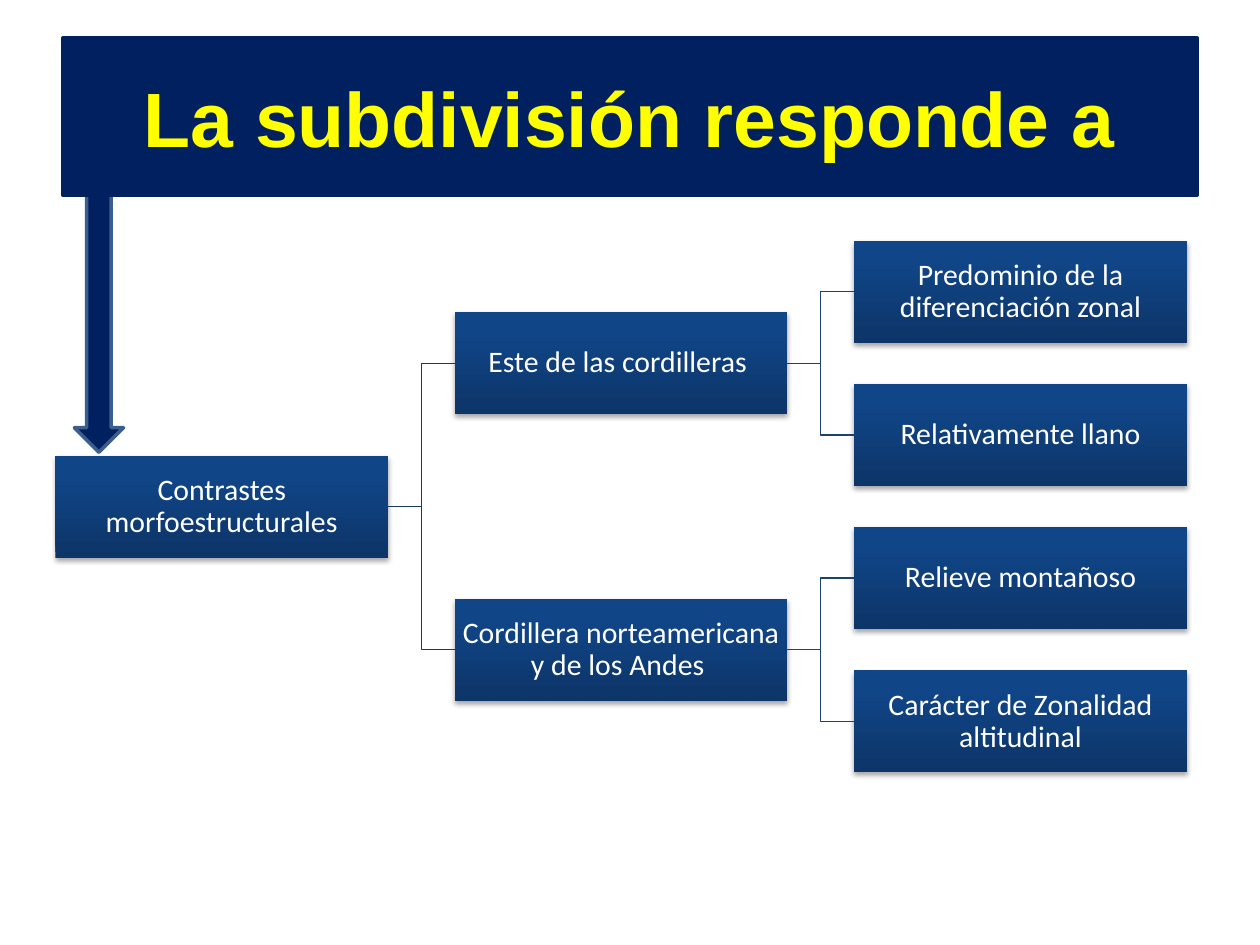
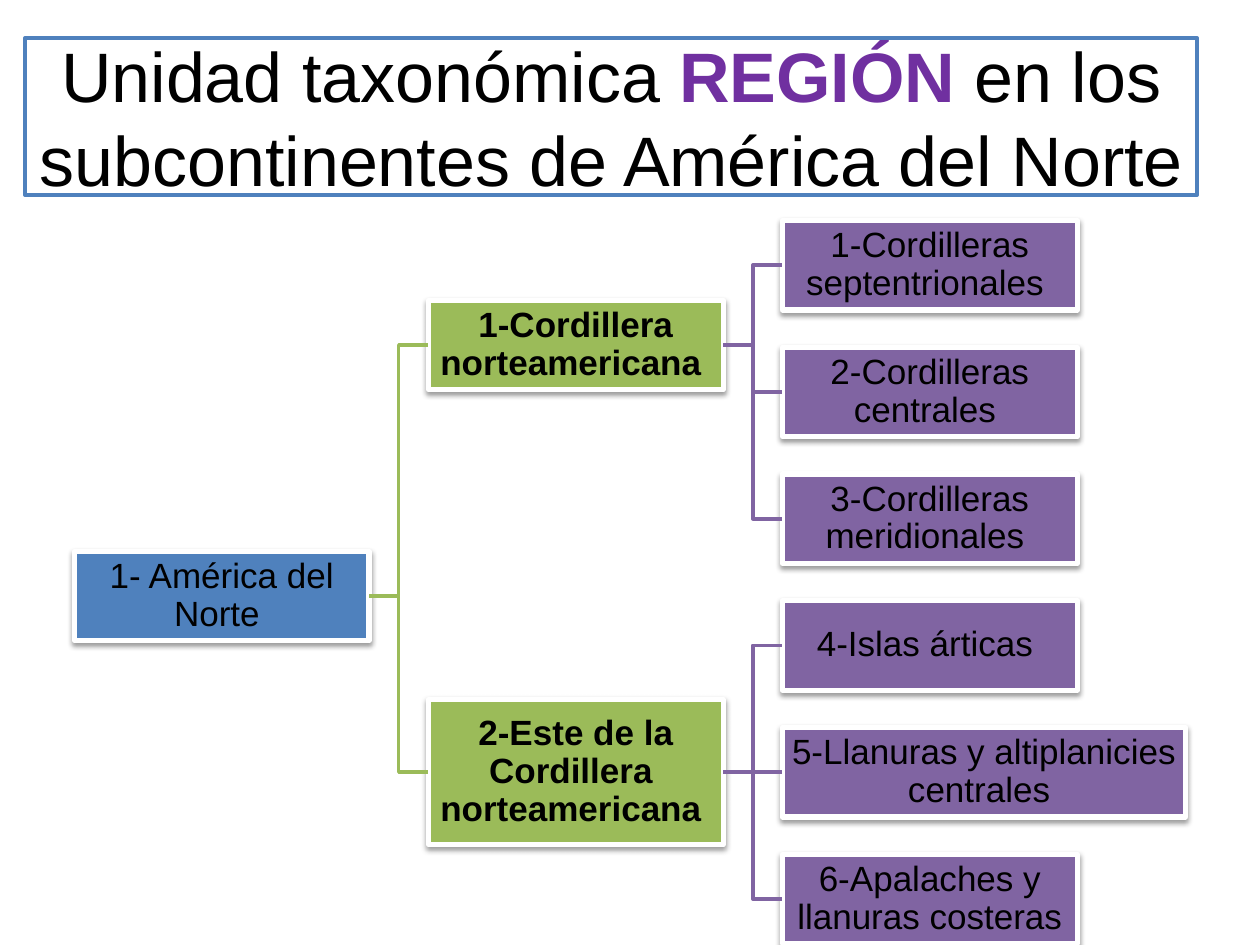
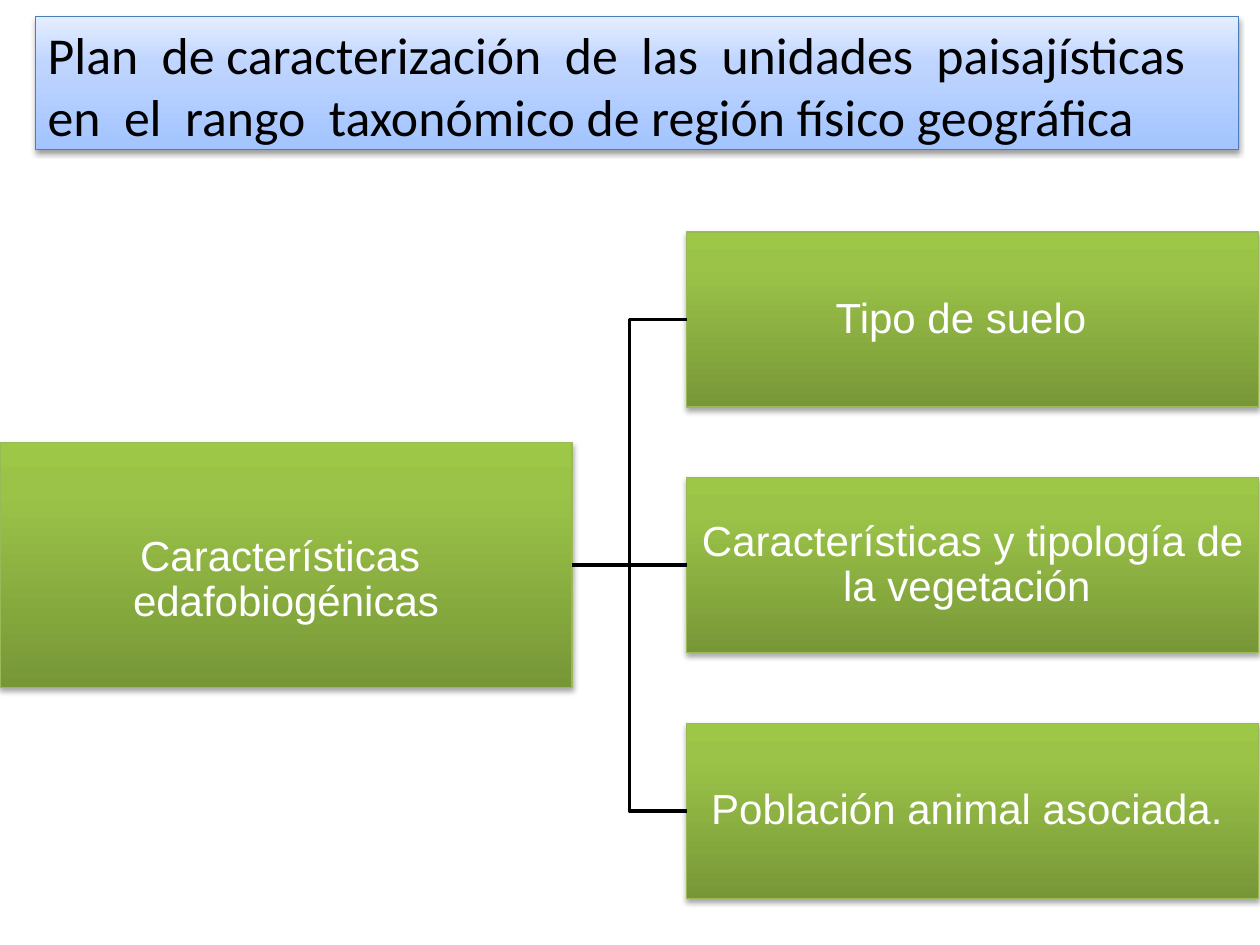
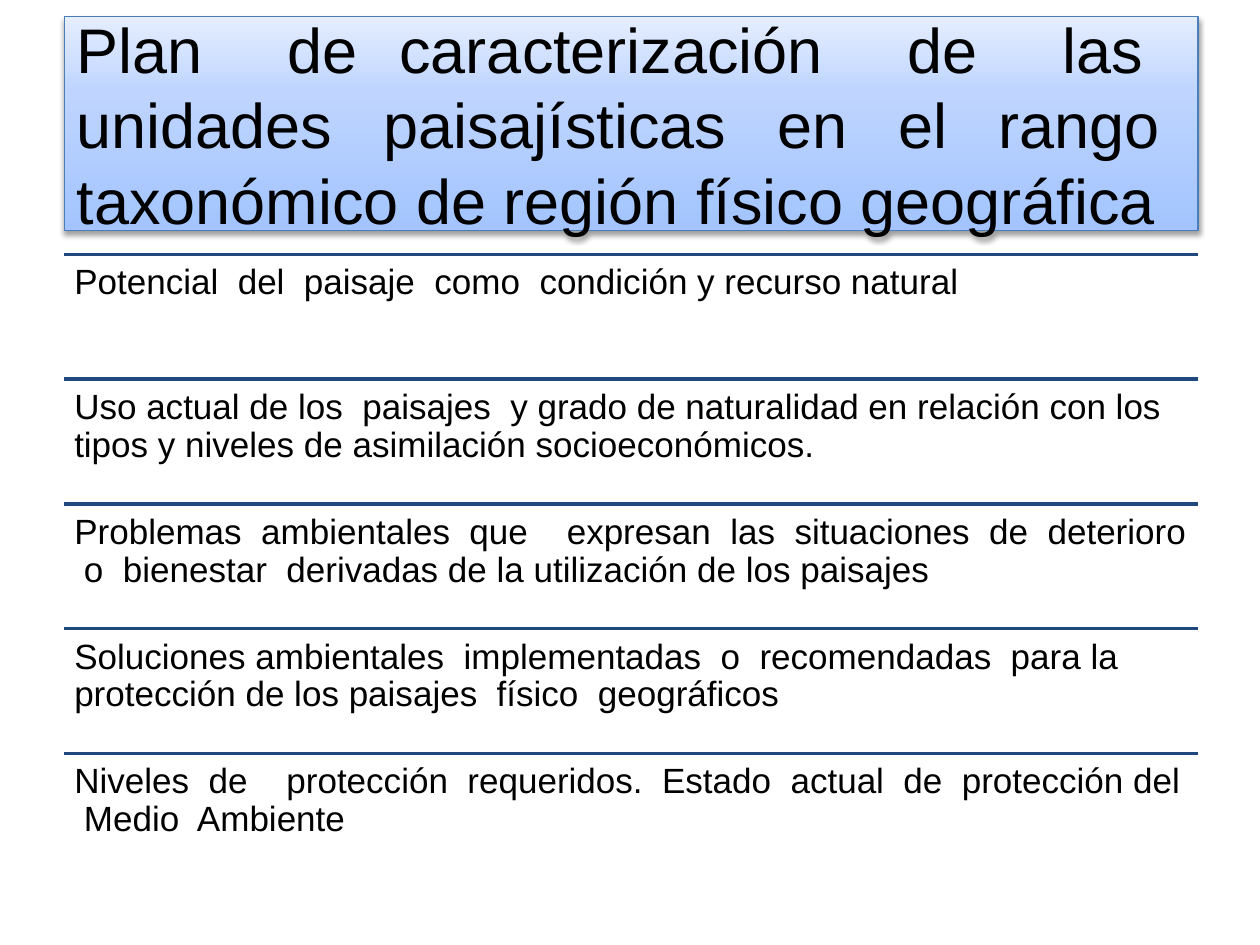
"""Build four slides on the regional subdivision of the American landscapes."""
from lxml.etree import SubElement
from pptx import Presentation
from pptx.dml.color import RGBColor
from pptx.enum.shapes import MSO_CONNECTOR as LINK, MSO_SHAPE as SHAPE
from pptx.enum.text import MSO_ANCHOR as ANCHOR, PP_ALIGN as ALIGN
from pptx.oxml.ns import qn
from pptx.util import Inches, Pt

COLORS = {
    "navy": "002060", "yellow": "FFFF00", "black": "000000", "white": "FFFFFF",
    "blue": "4F81BD", "green": "9BBB59", "purple": "8064A2", "accent": "7030A0",
    "arrow_edge": "3A5F8C", "title_edge": "4A7EBB", "green_edge": "98B955",
    "rule": "1F497D", "root_link": "193A64", "leaf_link": "1C4271",
}
DEEP_BLUE = [(0, "0D3568"), (80, "104587"), (100, "0E458A")]
LEAF_GREEN = [(0, "779737"), (80, "9BC348"), (100, "9DC746")]
PALE_BLUE = [(0, "A3C4FF"), (65, "BFD5FF"), (100, "E5EEFF")]


def add_box(slide, at, runs, fill=None, line=None, width=0.75, shadow=0, preset=SHAPE.RECTANGLE,
            font="Arial", size=20, color="black", bold=False, align=ALIGN.CENTER,
            anchor=ANCHOR.MIDDLE, insets=(0.1, 0.05, 0.1, 0.05), spacing=1.0):
    """Add a text panel; a list as fill means gradient stops from the bottom up."""
    place = [Inches(length) for length in at]
    box = slide.shapes.add_shape(preset, *place) if fill else slide.shapes.add_textbox(*place)
    if isinstance(fill, list):
        box.fill.gradient()
        box.fill.gradient_angle = 90
        stops = box._element.spPr.find(".//" + qn("a:gsLst"))
        for stop in list(stops):
            stops.remove(stop)
        for position, shade in fill:
            stop = SubElement(stops, qn("a:gs"), pos=str(position * 1000))
            SubElement(stop, qn("a:srgbClr"), val=shade)
    elif fill:
        box.fill.solid()
        box.fill.fore_color.rgb = RGBColor.from_string(COLORS[fill])
    if line:
        box.line.color.rgb = RGBColor.from_string(COLORS[line])
        box.line.width = Pt(width)
    else:
        box.line.fill.background()
    box.shadow.inherit = False
    if shadow:
        effects = box._element.spPr.find(qn("a:effectLst"))
        outer = SubElement(effects, qn("a:outerShdw"), blurRad=str(Pt(3.1)), dist=str(Pt(1.8)),
                           dir="5400000", rotWithShape="0")
        tint = SubElement(outer, qn("a:srgbClr"), val=COLORS["black"])
        SubElement(tint, qn("a:alpha"), val=str(shadow * 1000))
    frame = box.text_frame
    frame.word_wrap = True
    frame.vertical_anchor = anchor
    frame.margin_left, frame.margin_top, frame.margin_right, frame.margin_bottom = map(Inches, insets)
    paragraph = frame.paragraphs[0]
    paragraph.alignment = align
    paragraph.line_spacing = spacing
    paragraph.font.name, paragraph.font.size, paragraph.font.bold = font, Pt(size), bold
    paragraph.font.color.rgb = RGBColor.from_string(COLORS[color])
    for text, emphasis in runs:
        run = paragraph.add_run()
        run.text = text
        if emphasis:
            run.font.bold = True
            run.font.color.rgb = RGBColor.from_string(COLORS[emphasis])
    return box


def add_link(slide, kind, ends, color, width):
    """Add a shadowless connector between two points given in inches."""
    link = slide.shapes.add_connector(kind, *[Inches(length) for length in ends])
    link.line.color.rgb = RGBColor.from_string(COLORS[color])
    link.line.width = Pt(width)
    SubElement(link._element.spPr, qn("a:effectLst"))
    return link


deck = Presentation()
deck.slide_width, deck.slide_height = Inches(10), Inches(7.5)
contrasts, regions, features, plan = [deck.slides.add_slide(deck.slide_layouts[6]) for _ in range(4)]

PLAN_TITLE = ("Plan  de caracterización  de  las  unidades  paisajísticas  en  el  rango  "
              "taxonómico de región físico geográfica")
plan_panel = dict(fill=PALE_BLUE, line="title_edge", shadow=38)

add_box(contrasts, (0.59, 1.31, 0.39, 2.28), [], preset=SHAPE.DOWN_ARROW,
        fill="navy", line="arrow_edge", width=2)
add_box(contrasts, (0.5, 0.3, 9, 1.25), [("La subdivisión responde a", None)],
        fill="navy", line="navy", width=2, size=44, color="yellow", bold=True)
add_box(regions, (0.2, 0.3, 9.3, 1.25),
        [("Unidad taxonómica ", None), ("REGIÓN", "accent"),
         (" en los subcontinentes de América del Norte", None)],
        line="blue", width=2, size=40)
add_box(features, (0.28, 0.13, 9.55, 1.06), [(PLAN_TITLE, None)], **plan_panel,
        font="Calibri", size=29.6, align=ALIGN.LEFT, anchor=ANCHOR.TOP)

blue_node = dict(fill=DEEP_BLUE, shadow=35, font="Calibri", size=17, color="white",
                 insets=(0.01,) * 4, spacing=0.9)
region_node = dict(line="white", width=3, shadow=38, insets=(0.01,) * 4, spacing=0.9)
green_node = dict(fill=LEAF_GREEN, line="green_edge", shadow=35, size=24, color="white",
                  insets=(0.02,) * 4, spacing=0.9)
green_root = dict(green_node, anchor=ANCHOR.BOTTOM, insets=(0.02, 0.02, 0.02, 0.49))

# Each node: level, row, parent index, text, size that differs from the usual one
trees = [
    dict(slide=contrasts, left=0.44, column=3.17, first=2.315, row=1.137, size=(2.64, 0.81),
         styles=[blue_node] * 3, links=[None, "root_link", "leaf_link"], weight=0.75, nodes=[
             (0, 1.5, None, "Contrastes morfoestructurales", None),
             (1, 0.5, 0, "Este de las cordilleras ", None),
             (2, 0, 1, "Predominio de la diferenciación zonal", None),
             (2, 1, 1, "Relativamente llano", None),
             (1, 2.5, 0, "Cordillera norteamericana y de los Andes ", None),
             (2, 2, 4, "Relieve montañoso", None),
             (2, 3, 4, "Carácter de Zonalidad altitudinal", None)]),
    dict(slide=regions, left=0.59, column=2.81, first=2.105, row=1.006, size=(2.34, 0.71),
         styles=[dict(region_node, fill="blue"), dict(region_node, fill="green", bold=True),
                 dict(region_node, fill="purple")],
         links=[None, "green", "purple"], weight=2, nodes=[
             (0, 2.61, None, "1- América del Norte ", None),
             (1, 0.63, 0, "1-Cordillera norteamericana ", None),
             (2, 0, 1, "1-Cordilleras septentrionales ", None),
             (2, 1, 1, "2-Cordilleras centrales ", None),
             (2, 2, 1, "3-Cordilleras meridionales ", None),
             (1, 4, 0, "2-Este de la Cordillera  norteamericana ", (2.34, 1.15)),
             (2, 3, 5, "4-Islas árticas ", None),
             (2, 4, 5, "5-Llanuras y altiplanicies centrales ", (3.2, 0.71)),
             (2, 5, 5, "6-Apalaches y llanuras costeras", None)]),
    dict(slide=features, left=0, column=5.45, first=2.535, row=1.95, size=(4.54, 1.39),
         styles=[green_root, green_node], links=[None, "black"], weight=2, nodes=[
             (0, 1, None, "Características  edafobiogénicas", (4.54, 1.94)),
             (1, 0, 0, "Tipo de suelo  ", None),
             (1, 1, 0, "Características y tipología de la vegetación ", None),
             (1, 2, 0, "Población animal asociada. ", None)]),
]
for tree in trees:
    placed = []
    for level, row, parent, text, special in tree["nodes"]:
        width, height = special or tree["size"]
        left = tree["left"] + tree["column"] * level
        middle = tree["first"] + tree["row"] * row
        node = add_box(tree["slide"], (left, middle - height / 2, width, height),
                       [(text, None)], **tree["styles"][level])
        placed.append((node, left + width, middle))
        if parent is not None:
            source, right, source_middle = placed[parent]
            level_with = abs(middle - source_middle) < 0.02
            branch = add_link(tree["slide"], LINK.STRAIGHT if level_with else LINK.ELBOW,
                              (right, source_middle, left, middle),
                              tree["links"][level], tree["weight"])
            branch.begin_connect(source, 3)
            branch.end_connect(node, 1)

aspects = [
    "Potencial  del  paisaje  como  condición y recurso natural",
    "Uso actual de los  paisajes  y grado de naturalidad en relación con los tipos y niveles "
    "de asimilación socioeconómicos.",
    "Problemas  ambientales  que    expresan  las  situaciones  de  deterioro  o  bienestar  "
    "derivadas de la utilización de los paisajes",
    "Soluciones ambientales  implementadas  o  recomendadas  para la protección de los "
    "paisajes  físico  geográficos",
    "Niveles  de    protección  requeridos.  Estado  actual  de  protección del  Medio  Ambiente",
]
for index, aspect in enumerate(aspects):
    top = 2.02 + 0.99 * index
    add_link(plan, LINK.STRAIGHT, (0.51, top, 9.51, top), "rule", 2)
    add_box(plan, (0.51, top, 9, 0.99), [(aspect, None)], align=ALIGN.LEFT,
            anchor=ANCHOR.TOP, insets=(0.08,) * 4, spacing=0.9)
add_box(plan, (0.51, 0.13, 9, 1.7), [(PLAN_TITLE, None)], **plan_panel,
        size=36, align=ALIGN.JUSTIFY)

deck.save("out.pptx")
